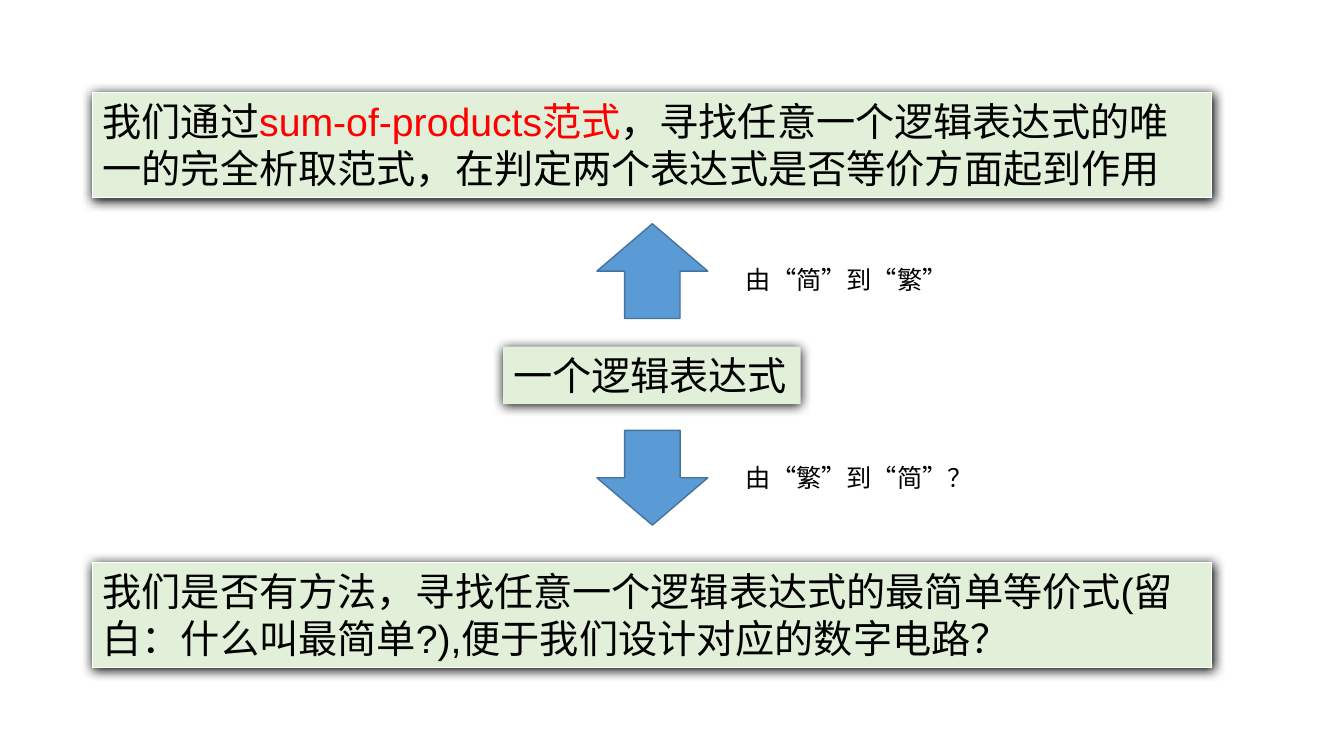
from dataclasses import dataclass
from typing import Optional

from lxml import etree
from pptx import Presentation
from pptx.dml.color import RGBColor
from pptx.enum.lang import MSO_LANGUAGE_ID as Lang
from pptx.enum.shapes import MSO_SHAPE as Shape
from pptx.enum.text import MSO_ANCHOR as Anchor, MSO_AUTO_SIZE as Fit, PP_ALIGN as Align
from pptx.oxml.ns import qn
from pptx.util import Inches, Pt

BLACK = RGBColor(0x00, 0x00, 0x00)
RED = RGBColor(0xFF, 0x00, 0x00)
WHITE = RGBColor(0xFF, 0xFF, 0xFF)
GREEN = RGBColor(0xE2, 0xF0, 0xD9)
BLUE = RGBColor(0x5B, 0x9B, 0xD5)
EDGE = RGBColor(0x43, 0x73, 0x9E)

WIDE = (0.92, 11.1, 1.04)  # left, width, height of the long panels


@dataclass
class Run:
    text: str
    color: RGBColor = BLACK


@dataclass
class Panel:
    left: float
    top: float
    width: float
    height: float
    runs: list[Run]
    line: Optional[RGBColor] = WHITE
    wrap: bool = True


@dataclass
class Step:
    top: float
    turn: int
    label: str
    text_top: float
    text_width: float


PANELS = [
    Panel(WIDE[0], 0.92, *WIDE[1:], [
        Run("我们通过"),
        Run("sum-of-products范式", RED),
        Run("，寻找任意一个逻辑表达式的唯一的完全析取范式，在判定两个表达式是否等价方面起到作用"),
    ]),
    Panel(4.99, 3.44, 2.95, 0.57, [Run("一个逻辑表达式")], None, False),
    Panel(WIDE[0], 5.58, *WIDE[1:], [
        Run("我们是否有方法，寻找任意一个逻辑表达式的最简单等价式(留白：什么叫最简单?),便于我们设计对应的数字电路？"),
    ]),
]

STEPS = [
    Step(2.22, 0, "由“简”到“繁”", 2.57, 2.22),
    Step(4.27, 180, "由“繁”到“简”？", 4.54, 2.47),
]


def write(shape, runs: list[Run], size: int, wrap: bool) -> None:
    frame = shape.text_frame
    frame.word_wrap = wrap
    frame.auto_size = Fit.SHAPE_TO_FIT_TEXT
    frame.vertical_anchor = Anchor.TOP
    para = frame.paragraphs[0]
    para.alignment = Align.LEFT
    for item in runs:
        run = para.add_run()
        run.text = item.text
        run.font.color.rgb = item.color
        style = {"name": "Arial", "size": Pt(size),
                 "language_id": Lang.SIMPLIFIED_CHINESE}
        for key, value in style.items():
            setattr(run.font, key, value)


def paint(shape, fill: RGBColor, line: Optional[RGBColor], width: float) -> None:
    shape.shadow.inherit = False
    shape.fill.solid()
    shape.fill.fore_color.rgb = fill
    if line is None:
        shape.line.fill.background()
    else:
        shape.line.color.rgb = line
        shape.line.width = Pt(width)


def shade(shape) -> None:
    effects = shape.element.spPr.find(qn("a:effectLst"))
    outer = etree.SubElement(
        effects, qn("a:outerShdw"), blurRad=str(Pt(8.5)), dist=str(Pt(1)),
        dir="5400000", algn="tl", rotWithShape="0")
    etree.SubElement(outer, qn("a:srgbClr"), val=str(BLACK))


def add_panel(slide, panel: Panel) -> None:
    box = slide.shapes.add_shape(
        Shape.RECTANGLE, Inches(panel.left), Inches(panel.top),
        Inches(panel.width), Inches(panel.height))
    paint(box, GREEN, panel.line, 0.75)
    shade(box)
    write(box, panel.runs, 28, panel.wrap)


def add_step(slide, step: Step) -> None:
    arrow = slide.shapes.add_shape(
        Shape.UP_ARROW, Inches(5.92), Inches(step.top), Inches(1.1), Inches(0.94))
    paint(arrow, BLUE, EDGE, 1)
    arrow.rotation = step.turn
    label = slide.shapes.add_textbox(
        Inches(7.3), Inches(step.text_top), Inches(step.text_width), Inches(0.4))
    write(label, [Run(step.label)], 18, False)


def main() -> None:
    deck = Presentation()
    deck.slide_width, deck.slide_height = Inches(13.33), Inches(7.5)
    slide = deck.slides.add_slide(deck.slide_layouts[6])

    # Green statement panels
    for panel in PANELS:
        add_panel(slide, panel)

    # Arrows with their labels
    for step in STEPS:
        add_step(slide, step)

    deck.save("out.pptx")


if __name__ == "__main__":
    main()
